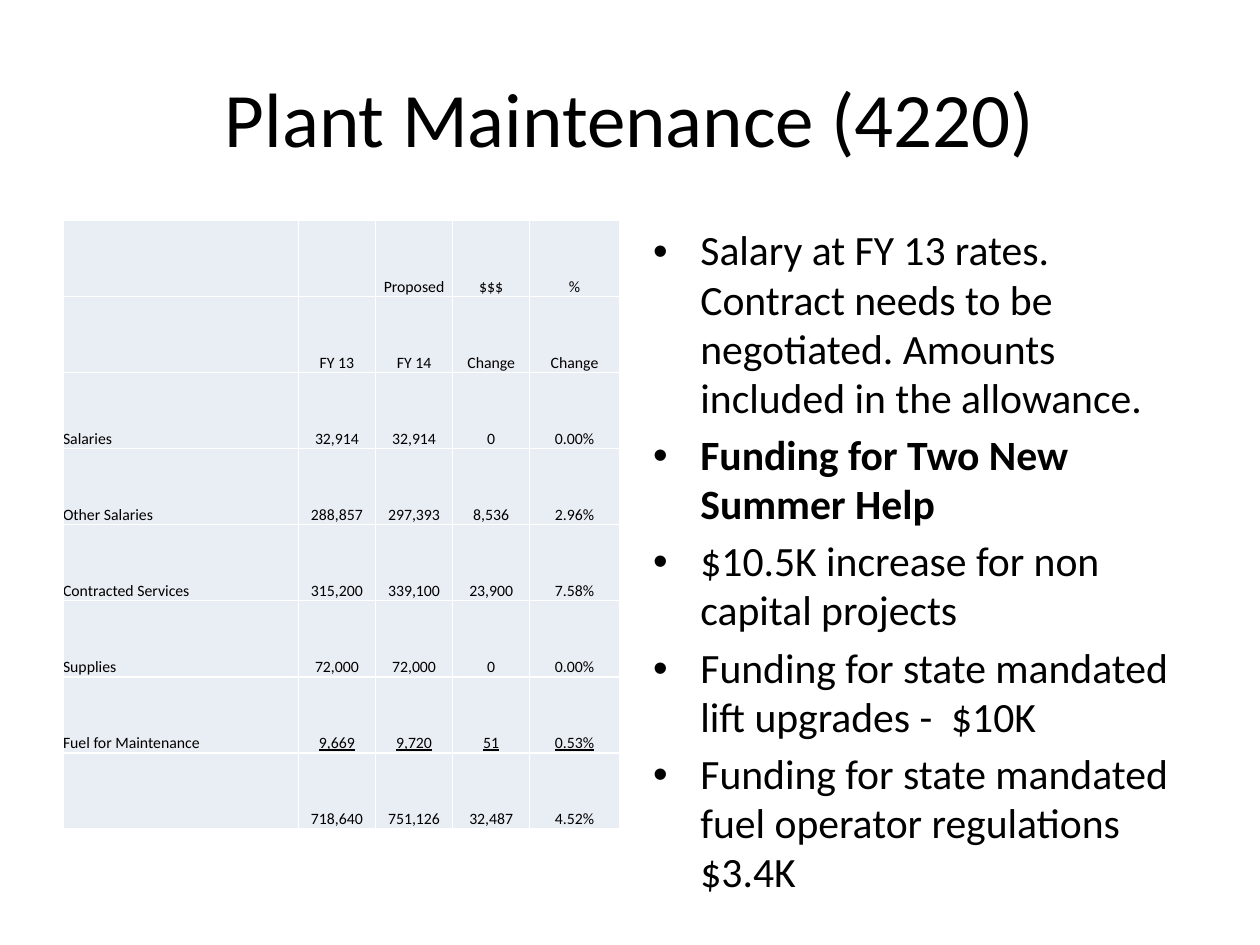
"""Build the plant maintenance budget slide."""
from dataclasses import dataclass

from lxml import etree
from pptx import Presentation
from pptx.dml.color import RGBColor
from pptx.enum import text
from pptx.oxml import ns
from pptx.util import Pt


@dataclass
class Theme:
    face: str = "Calibri"
    ink: str = "000000"
    cell: str = "E9EDF4"
    rule: str = "FFFFFF"
    head: float = 44
    body: float = 23.8
    small: float = 9


class Deck:
    def __init__(self, theme, wide, high):
        self.theme = theme
        self.file = Presentation()
        self.file.slide_width, self.file.slide_height = Pt(wide), Pt(high)
        self.slide = self.file.slides.add_slide(self.file.slide_layouts[1])

    def label(self, par, words, size, **form):
        run = par.add_run()
        run.text = words
        for key, val in {"name": self.theme.face, "size": Pt(size), **form}.items():
            setattr(run.font, key, val)
        run.font.color.rgb = RGBColor.from_string(self.theme.ink)

    def place(self, shape, box):
        for key, val in zip(("left", "top", "width", "height"), box):
            setattr(shape, key, Pt(val))

    def title(self, words, box):
        shape = self.slide.shapes.title
        self.place(shape, box)
        frame = shape.text_frame
        frame.vertical_anchor = text.MSO_ANCHOR.MIDDLE
        frame.paragraphs[0].alignment = text.PP_ALIGN.CENTER
        self.label(frame.paragraphs[0], words, self.theme.head)

    def list(self, items, box):
        shape = self.slide.placeholders[1]
        self.place(shape, box)
        frame = shape.text_frame
        frame.auto_size = text.MSO_AUTO_SIZE.NONE
        for num, (words, bold) in enumerate(items):
            par = frame.add_paragraph() if num else frame.paragraphs[0]
            par.line_spacing = 0.98
            self.label(par, words, self.theme.body, bold=bold)

    def edge(self, cell):
        props = cell._tc.get_or_add_tcPr()
        for side in ("lnL", "lnR", "lnT", "lnB"):
            line = etree.SubElement(props, ns.qn(f"a:{side}"), w=str(Pt(1)))
            fill = etree.SubElement(line, ns.qn("a:solidFill"))
            etree.SubElement(fill, ns.qn("a:srgbClr"), val=self.theme.rule)

    def table(self, rows, cols, box, under):
        size = len(rows), len(cols)
        grid = self.slide.shapes.add_table(*size, *map(Pt, box)).table
        for col, wide in zip(grid.columns, cols):
            col.width = Pt(wide)
        for r, row in enumerate(rows):
            grid.rows[r].height = Pt(box[3] / len(rows))
            for c, words in enumerate(row):
                cell = grid.cell(r, c)
                self.edge(cell)
                cell.fill.solid()
                cell.fill.fore_color.rgb = RGBColor.from_string(self.theme.cell)
                for side in ("left", "right", "top", "bottom"):
                    setattr(cell, f"margin_{side}", 0)
                cell.vertical_anchor = text.MSO_ANCHOR.BOTTOM
                if words:
                    par = cell.text_frame.paragraphs[0]
                    par.alignment = text.PP_ALIGN.CENTER if c else text.PP_ALIGN.LEFT
                    line = r == under and c > 0
                    self.label(par, words, self.theme.small, bold=False, underline=line)


ROWS = [
    ("", "", "Proposed", "$$$", "%"),
    ("", "FY 13", "FY 14", "Change", "Change"),
    ("Salaries", "32,914", "32,914", "0", "0.00%"),
    ("Other Salaries", "288,857", "297,393", "8,536", "2.96%"),
    ("Contracted Services", "315,200", "339,100", "23,900", "7.58%"),
    ("Supplies", "72,000", "72,000", "0", "0.00%"),
    ("Fuel for Maintenance", "9,669", "9,720", "51", "0.53%"),
    ("", "718,640", "751,126", "32,487", "4.52%"),
]
ITEMS = [
    ("Salary at FY 13 rates. Contract needs to be negotiated. "
     "Amounts included in the allowance.", False),
    ("Funding for Two New Summer Help", True),
    ("$10.5K increase for non capital projects", False),
    ("Funding for state mandated lift upgrades -  $10K", False),
    ("Funding for state mandated fuel operator regulations $3.4K", False),
]


def main():
    deck = Deck(Theme(), 720, 540)
    deck.title("Plant Maintenance (4220)", (36, 21.6, 648, 90))
    deck.list(ITEMS, (366, 126, 318, 356.4))
    cols = (134.5, 44.1, 44.1, 44.1, 51.2)
    deck.table(ROWS, cols, (36, 126, sum(cols), 347.76), under=len(ROWS) - 2)
    deck.file.save("out.pptx")


if __name__ == "__main__":
    main()
